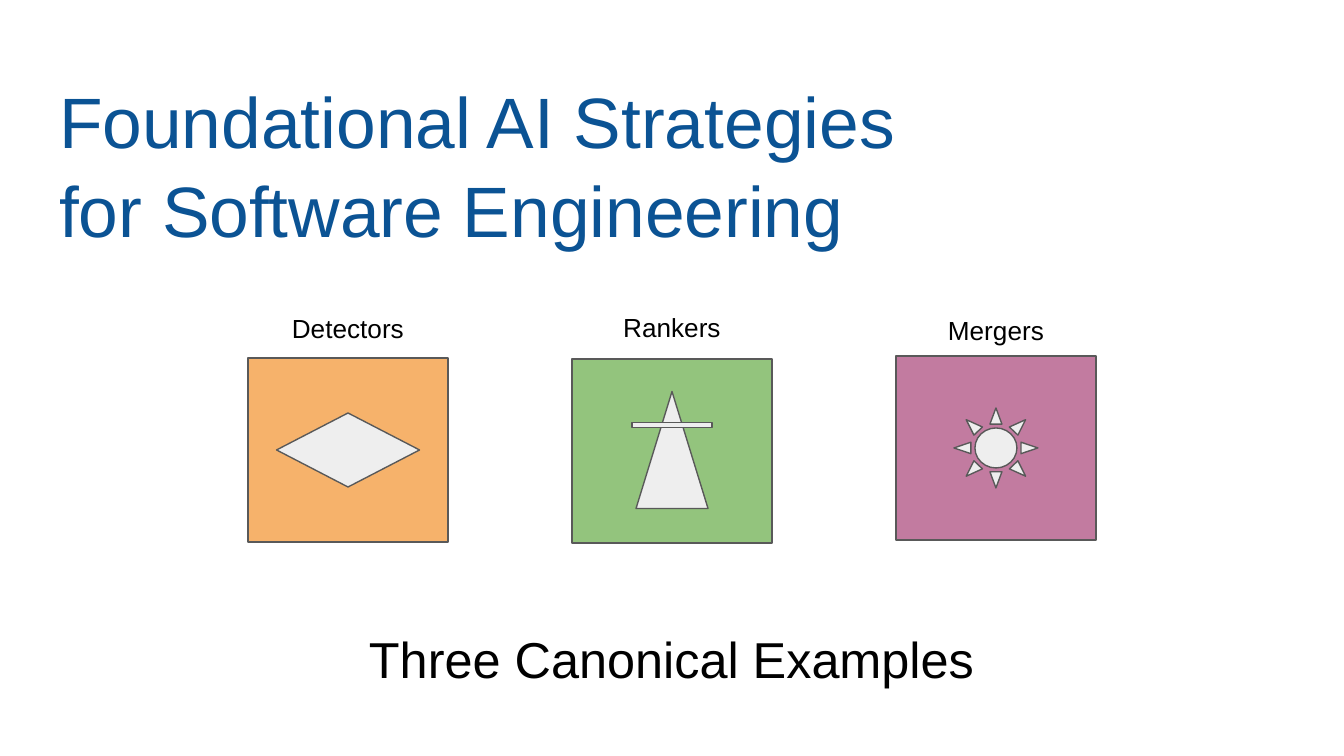
from pptx import Presentation
from pptx import util as u
from pptx.dml.color import RGBColor
from pptx.enum import shapes, text

PX = 914400 / 134.4
KIND = shapes.MSO_SHAPE
INK, OUTLINE, PALE, TITLE_BLUE = "000000", "595959", "EEEEEE", "0B5394"
FRAME_HEIGHT, LABEL_HEIGHT = 184, 59
TILE_WIDTH, TILE_PITCH, FIRST_TILE = 200, 324, 248
STRATEGIES = [
    ("Detectors", "F6B26B", 298, 244, [(KIND.FLOWCHART_DECISION, 143, 74, 0)]),
    ("Rankers", "93C47D", 297, 246,
     [(KIND.FLOWCHART_EXTRACT, 72, 117, -1), (KIND.RECTANGLE, 80, 5, -26)]),
    ("Mergers", "C27BA0", 300, 240, [(KIND.SUN, 84, 80, 0)]),
]


def emu(*lengths):
    """Turn px lengths into EMU."""
    return [u.Emu(round(length * PX)) for length in lengths]


def rgb(value):
    """Turn a hex string into a colour."""
    return RGBColor.from_string(value)


def add_words(parent, box, lines, size, colour=INK,
              align=text.PP_ALIGN.CENTER, spacing=1.0):
    """Write lines of text at the foot of a box."""
    frame = parent.add_textbox(*emu(*box)).text_frame
    frame.word_wrap = True
    frame.vertical_anchor = text.MSO_ANCHOR.BOTTOM
    frame.margin_left = frame.margin_right = u.Inches(0.1)
    frame.margin_top = frame.margin_bottom = u.Inches(0.1)
    for index, line in enumerate(lines):
        paragraph = frame.add_paragraph() if index else frame.paragraphs[0]
        paragraph.alignment = align
        paragraph.line_spacing = spacing
        run = paragraph.add_run()
        run.text = line
        run.font.name = "Arial"
        run.font.size = u.Pt(size)
        run.font.color.rgb = rgb(colour)


def add_outlined(parent, kind, box, fill):
    """Draw a filled preset shape with a thin grey outline."""
    shape = parent.add_shape(kind, *emu(*box))
    shape.shadow.inherit = False
    shape.fill.solid()
    shape.fill.fore_color.rgb = rgb(fill)
    shape.line.color.rgb = rgb(OUTLINE)
    shape.line.width = u.Pt(0.75)


def add_strategy(slide, box, name, colour, symbol):
    """Group a label, a coloured frame and the symbol centred in it."""
    left, top, width, height = box
    tile = slide.shapes.add_group_shape().shapes
    frame_top = top + height - FRAME_HEIGHT
    add_outlined(tile, KIND.RECTANGLE, (left, frame_top, width, FRAME_HEIGHT), colour)
    for kind, part_width, part_height, shift in symbol:
        part_left = left + (width - part_width) / 2
        part_top = frame_top + (FRAME_HEIGHT - part_height) / 2 + shift
        add_outlined(tile, kind, (part_left, part_top, part_width, part_height), PALE)
    add_words(tile, (left, top, width, LABEL_HEIGHT), [name], 14)


def main():
    """Build the slide and save it."""
    deck = Presentation()
    deck.slide_width, deck.slide_height = emu(1344, 756)
    slide = deck.slides.add_slide(deck.slide_layouts[6])
    add_words(slide.shapes, (46, 66, 1251, 199),
              ["Foundational AI Strategies", "for Software Engineering"],
              38.2, TITLE_BLUE, text.PP_ALIGN.LEFT, 1.04)
    for column, (name, colour, top, height, symbol) in enumerate(STRATEGIES):
        left = FIRST_TILE + column * TILE_PITCH
        add_strategy(slide, (left, top, TILE_WIDTH, height), name, colour, symbol)
    add_words(slide.shapes, (305, 613, 733, 89), ["Three Canonical Examples"], 27)
    deck.save("out.pptx")


if __name__ == "__main__":
    main()
